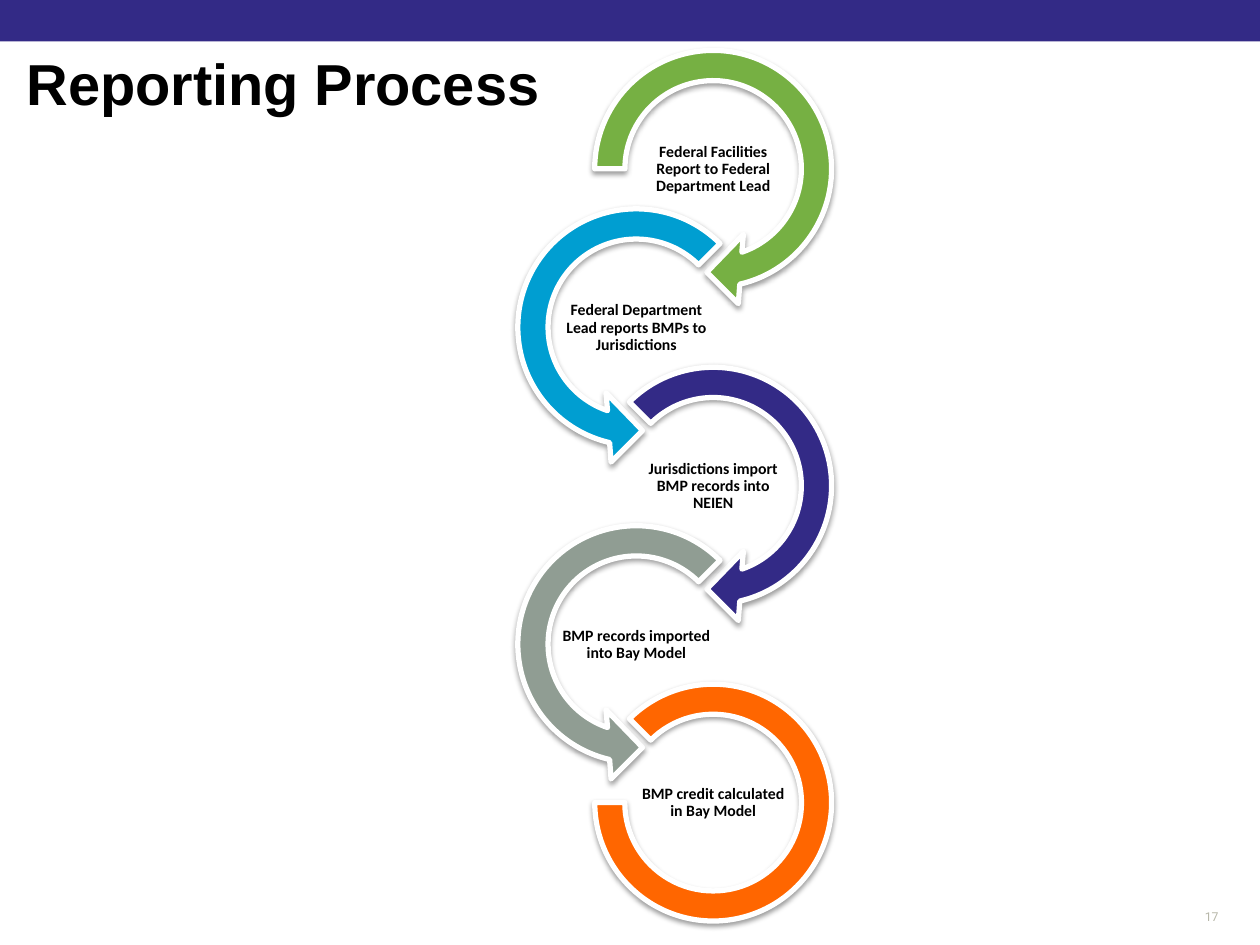
from dataclasses import dataclass
from math import cos, radians, sin, tan

from lxml.etree import SubElement
from pptx import Presentation
from pptx.dml.color import RGBColor
from pptx.enum.shapes import MSO_SHAPE as Shape
from pptx.enum.text import MSO_ANCHOR as Anchor, PP_ALIGN as Align
from pptx.oxml.ns import qn
from pptx.util import Inches, Pt


@dataclass(frozen=True)
class Theme:
    bar: str = "332A86"
    ink: str = "000000"
    edge: str = "FFFFFF"
    mute: str = "B7B7A9"
    rings: tuple = ("76B043", "009ED1", "332A86", "909D93", "FF6600")
    head: int = 33
    body: int = 9
    foot: int = 7
    line: int = 3


THEME = Theme()
STEPS = (
    "Federal Facilities Report to Federal Department Lead",
    "Federal Department Lead reports BMPs to Jurisdictions",
    "Jurisdictions import BMP records into NEIEN",
    "BMP records imported into Bay Model",
    "BMP credit calculated in Bay Model",
)
OUTER, INNER, HALF = 0.94, 0.7, 1.09
TIP = ((0.2, 1.07), (-0.05, 0.82), (0.24, 0.52))


def rgb(code):
    return RGBColor.from_string(code)


def add_text(shapes, box, text, font, size, color, align, anchor,
             bold=False, pad=(0, 0), gap=1.0):
    label = shapes.add_textbox(*map(Inches, box))
    frame = label.text_frame
    frame.word_wrap = True
    frame.margin_left = frame.margin_right = Inches(pad[0])
    frame.margin_top = frame.margin_bottom = Inches(pad[1])
    frame.vertical_anchor = anchor
    frame.text = text
    para = frame.paragraphs[0]
    para.alignment, para.line_spacing = align, gap
    face = para.runs[0].font
    face.name, face.size, face.bold = font, Pt(size), bold
    face.color.rgb = rgb(color)


def add_shade(shape):
    effect = SubElement(shape._element.spPr, qn("a:effectLst"))
    shade = SubElement(effect, qn("a:outerShdw"), blurRad=str(Pt(3.1)),
                       dist=str(Pt(1.6)), dir="5400000", rotWithShape="0")
    tint = SubElement(shade, qn("a:srgbClr"), val=THEME.ink)
    SubElement(tint, qn("a:alpha"), val="38000")


def paint(shape, color):
    shape.fill.solid()
    shape.fill.fore_color.rgb = rgb(color)
    shape.line.color.rgb = rgb(THEME.edge)
    shape.line.width = Pt(THEME.line)
    add_shade(shape)


def polar(radius, angle):
    return radius * cos(angle), radius * sin(angle)


def arc(radius, start, end, count=3):
    turn = radians(end - start) / count
    pull = 4 / 3 * tan(turn / 4)
    curves = []
    for i in range(count):
        a = radians(start) + i * turn
        b = a + turn
        (ax, ay), (bx, by) = polar(radius, a), polar(radius, b)
        curves.append(("cubicBezTo", ((ax - pull * ay, ay + pull * ax),
                                      (bx + pull * by, by - pull * bx), (bx, by))))
    return curves


def add_arrow(shapes, mid, start, side):
    left, top = mid[0] - HALF, mid[1] - HALF
    right, low = mid[0] + HALF, mid[1] + HALF
    pen = shapes.build_freeform(Inches(left), Inches(top))
    pen.add_line_segments([(Inches(x), Inches(y)) for x, y in
                           ((right, top), (right, low), (left, low))])
    arrow = pen.convert_to_shape()
    track = arrow._element.spPr.find(".//" + qn("a:pathLst"))[0]
    for step in list(track):
        track.remove(step)
    moves = [("moveTo", (polar(OUTER, radians(start)),))]
    moves += arc(OUTER, start, 437)
    moves += [("lnTo", (point,)) for point in TIP + (polar(INNER, radians(431)),)]
    moves += arc(INNER, 431, start)
    for kind, points in moves:
        step = SubElement(track, qn("a:" + kind))
        for x, y in points:
            SubElement(step, qn("a:pt"), x=str(Inches(HALF + side * x)),
                       y=str(Inches(HALF + y)))
    SubElement(track, qn("a:close"))
    return arrow


def add_ring(shapes, mid):
    box = (mid[0] - OUTER, mid[1] - OUTER, 2 * OUTER, 2 * OUTER)
    ring = shapes.add_shape(Shape.BLOCK_ARC, *map(Inches, box))
    for i, value in enumerate((135, 108, 0.127)):
        ring.adjustments[i] = value
    return ring


def add_chain(slide, box):
    left, top, width, height = box
    shapes = slide.shapes.add_group_shape().shapes
    pitch = (height - 2 * OUTER) / (len(STEPS) - 1)
    for i, (text, color) in enumerate(zip(STEPS, THEME.rings)):
        odd = i % 2
        mid = (left + OUTER if odd else left + width - OUTER, top + OUTER + i * pitch)
        if i == len(STEPS) - 1:
            ring = add_ring(shapes, mid)
        else:
            ring = add_arrow(shapes, mid, 225 if i else 180, -1 if odd else 1)
        paint(ring, color)
        add_text(shapes, (mid[0] - 0.61, mid[1] - 0.3, 1.22, 0.61), text,
                 "Calibri", THEME.body, THEME.ink, Align.CENTER, Anchor.MIDDLE,
                 True, (0.01, 0.01), 0.9)


def add_header(slide, box):
    left, top, width, height = box
    bar = slide.shapes.add_shape(
        Shape.RECTANGLE, *map(Inches, (left, top, width, 0.33)))
    bar.shadow.inherit = False
    bar.fill.solid()
    bar.fill.fore_color.rgb = rgb(THEME.bar)
    bar.line.fill.background()
    add_text(slide.shapes, (left + 0.21, top + 0.34, 9.23, height - 0.34),
             "Reporting Process", "Arial", THEME.head, THEME.ink,
             Align.LEFT, Anchor.BOTTOM, True, gap=0.85)


def add_footer(slide, box):
    add_text(slide.shapes, box, "17", "Roboto", THEME.foot, THEME.mute,
             Align.RIGHT, Anchor.MIDDLE, pad=(0, 0.03))


def main():
    deck = Presentation()
    deck.slide_width, deck.slide_height = Inches(10), Inches(7.5)
    slide = deck.slides.add_slide(deck.slide_layouts[6])
    add_header(slide, (0, 0, 10, 0.93))
    add_footer(slide, (9.25, 7.15, 0.42, 0.25))
    add_chain(slide, (4.11, 0.4, 2.49, 6.91))
    deck.save("out.pptx")


if __name__ == "__main__":
    main()
